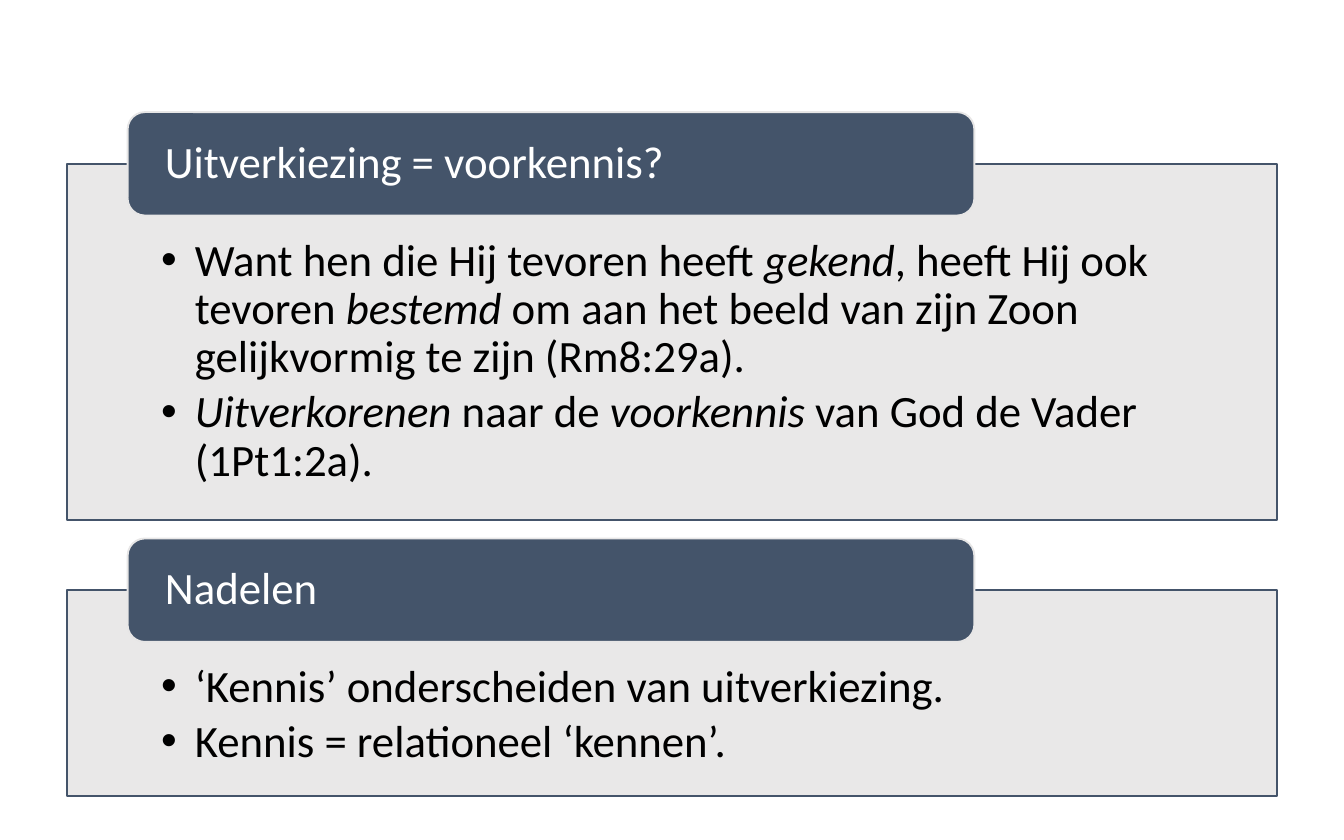
from dataclasses import dataclass

from lxml.etree import SubElement
from pptx import Presentation
from pptx.dml.color import RGBColor
from pptx.enum.shapes import MSO_SHAPE
from pptx.enum.text import MSO_ANCHOR, PP_ALIGN
from pptx.oxml.ns import qn
from pptx.util import Pt


@dataclass(frozen=True)
class Theme:
    font: str = "Calibri"
    size: float = 24
    line: float = 1
    slate: RGBColor = RGBColor(0x44, 0x54, 0x6A)
    grey: RGBColor = RGBColor(0xE7, 0xE6, 0xE6)
    black: RGBColor = RGBColor(0, 0, 0)
    white: RGBColor = RGBColor(0xFF, 0xFF, 0xFF)


THEME = Theme()

# Layout in points
PANEL_LEFT, PANEL_WIDTH = 36, 648
HEADER_LEFT, HEADER_WIDTH, HEADER_HEIGHT = 68.4, 453.6, 55.4
FIRST_TOP, GAP = 87.8, 37.6
BULLET_INDENT = 18

# Header, panel height, bullets as (text, italic) runs
SECTIONS = [
    ("Uitverkiezing = voorkennis?", 190.8, [
        [("Want hen die Hij tevoren heeft ", False), ("gekend", True),
         (", heeft Hij ook tevoren ", False), ("bestemd", True),
         (" om aan het beeld van zijn Zoon gelijkvormig te zijn (Rm8:29a).", False)],
        [("Uitverkorenen", True), (" naar de ", False), ("voorkennis", True),
         (" van God de Vader (1Pt1:2a).", False)],
    ]),
    ("Nadelen", 110.2, [
        [("‘Kennis’ onderscheiden van uitverkiezing.", False)],
        [("Kennis = relationeel ‘kennen’.", False)],
    ]),
]


def add_box(slide, kind, box, fill, line, insets, anchor):
    sp = slide.shapes.add_shape(kind, *(Pt(v) for v in box))
    sp.shadow.inherit = False
    sp.fill.solid()
    sp.fill.fore_color.rgb = fill
    sp.line.color.rgb = line
    sp.line.width = Pt(THEME.line)
    tf = sp.text_frame
    tf.word_wrap = True
    tf.vertical_anchor = anchor
    tf.margin_left, tf.margin_top, tf.margin_right, tf.margin_bottom = (
        Pt(v) for v in insets)
    return sp


def set_opacity(sp, percent):
    color = sp.fill._xPr.find(qn("a:solidFill"))[0]
    SubElement(color, qn("a:alpha"), val=str(percent * 1000))


def add_runs(p, runs, color, space_after):
    p.alignment = PP_ALIGN.LEFT
    p.line_spacing = 0.9
    p.space_after = Pt(space_after)
    for text, italic in runs:
        r = p.add_run()
        r.text = text
        r.font.name = THEME.font
        r.font.size = Pt(THEME.size)
        r.font.italic = italic
        r.font.color.rgb = color


def set_bullet(p):
    p.level = 1
    pPr = p._p.get_or_add_pPr()
    pPr.set("marL", str(Pt(BULLET_INDENT)))
    pPr.set("indent", str(-Pt(BULLET_INDENT)))
    SubElement(pPr, qn("a:buFont"), typeface="Arial")
    SubElement(pPr, qn("a:buChar"), char="•")


def add_panel(slide, top, height, bullets):
    sp = add_box(slide, MSO_SHAPE.RECTANGLE, (PANEL_LEFT, top, PANEL_WIDTH, height),
                 THEME.grey, THEME.slate, (50.4, 39.4, 50.4, 13.7), MSO_ANCHOR.TOP)
    set_opacity(sp, 90)
    tf = sp.text_frame
    for i, runs in enumerate(bullets):
        p = tf.add_paragraph() if i else tf.paragraphs[0]
        add_runs(p, runs, THEME.black, 0.15 * THEME.size)
        set_bullet(p)


def add_header(slide, panel_top, text):
    box = (HEADER_LEFT, panel_top - HEADER_HEIGHT / 2, HEADER_WIDTH, HEADER_HEIGHT)
    sp = add_box(slide, MSO_SHAPE.ROUNDED_RECTANGLE, box, THEME.slate, THEME.grey,
                 (17.3, 0, 17.3, 0), MSO_ANCHOR.MIDDLE)
    add_runs(sp.text_frame.paragraphs[0], [(text, False)], THEME.white, 0)


def main():
    prs = Presentation()
    prs.slide_width, prs.slide_height = Pt(720), Pt(450)
    slide = prs.slides.add_slide(prs.slide_layouts.get_by_name("Blank"))

    # Each section is a panel with a header straddling its top edge
    top = FIRST_TOP
    for title, height, bullets in SECTIONS:
        add_panel(slide, top, height, bullets)
        add_header(slide, top, title)
        top += height + GAP

    prs.save("out.pptx")


if __name__ == "__main__":
    main()
